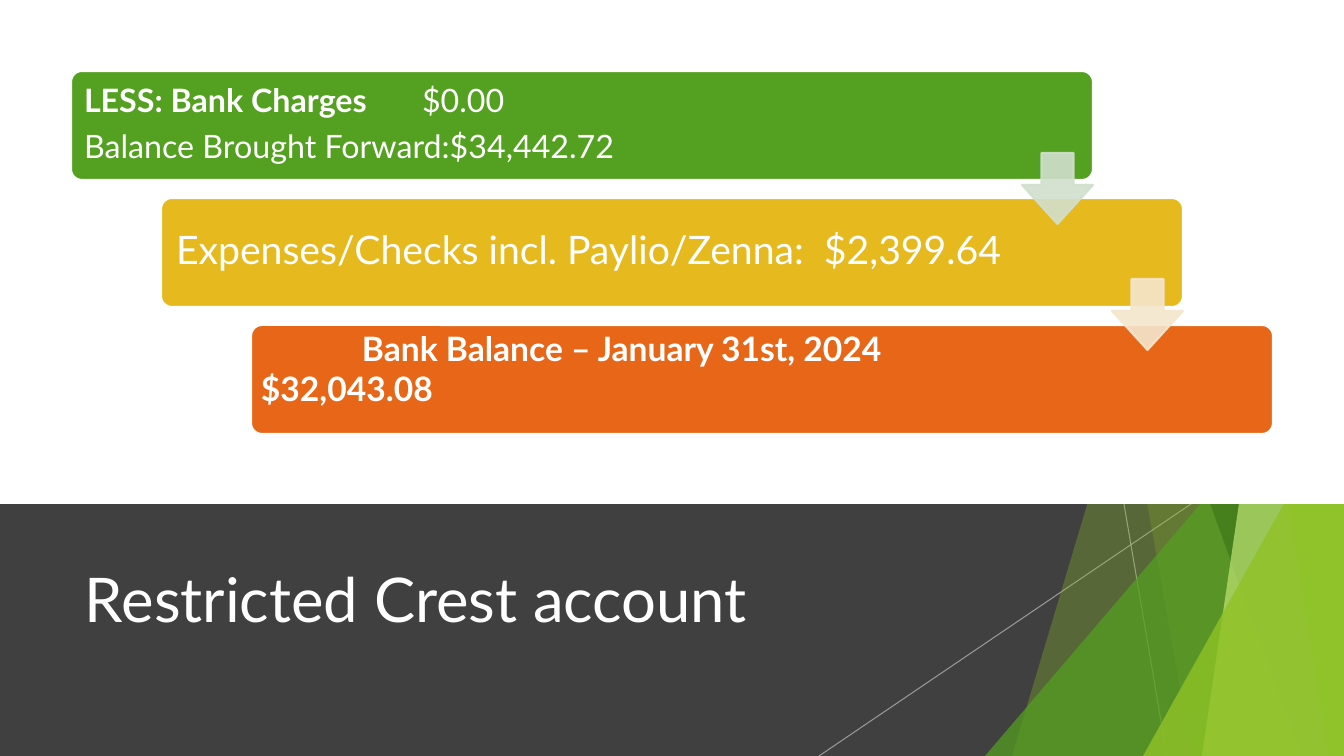
from lxml.etree import SubElement
from pptx import Presentation
from pptx.dml.color import RGBColor
from pptx.enum.shapes import MSO_CONNECTOR, MSO_SHAPE
from pptx.enum.text import MSO_ANCHOR
from pptx.oxml.ns import qn
from pptx.util import Pt

SCALE = 914400 / 100.8
WIDTH, HEIGHT, PANEL_TOP = 1344, 756, 504
FONT = "Lato"

WHITE = RGBColor(0xFF, 0xFF, 0xFF)
CHARCOAL = RGBColor(0x40, 0x40, 0x40)
SILVER = RGBColor(0xBF, 0xBF, 0xBF)
LIME = RGBColor(0x90, 0xC2, 0x26)
GREEN = RGBColor(0x54, 0xA0, 0x21)
FOREST = RGBColor(0x3F, 0x78, 0x19)
PALE_LIME = RGBColor(0xC0, 0xE4, 0x74)
GOLD = RGBColor(0xE6, 0xB9, 0x1E)
ORANGE = RGBColor(0xE7, 0x66, 0x18)
PALE_GREEN = RGBColor(0xD1, 0xDF, 0xCD)
PALE_GOLD = RGBColor(0xF5, 0xE6, 0xCD)

TITLE = "Restricted Crest account"

CARDS = [
    dict(color=GREEN, size=23, spacing=0.9, after=8, inset=10, tab=338,
         text_width=904, anchor=MSO_ANCHOR.MIDDLE,
         lines=[[("LESS: Bank Charges ", True), ("\t$0.00", False)],
                [("Balance Brought Forward:$34,442.72", False)]]),
    dict(color=GOLD, size=28, spacing=0.9, after=0, inset=12, tab=101,
         text_width=855, anchor=MSO_ANCHOR.MIDDLE,
         lines=[[("Expenses/Checks incl. Paylio/Zenna:  $2,399.64", False)]]),
    dict(color=ORANGE, size=24, spacing=1.0, after=0, inset=7, tab=101,
         text_width=855, anchor=MSO_ANCHOR.TOP,
         lines=[[("\tBank Balance – January 31st, 2024", True)],
                [("$32,043.08", True)]]),
]
ARROW_COLORS = [PALE_GREEN, PALE_GOLD]

RAYS = [(1124, 1167), (1191, 819)]
FACETS = [
    ("band", (1238, 1012), LIME, 30),
    ("band", (1058, 1192), LIME, 20),
    ("triangle", (985, 336), GREEN, 72),
    ("band", (1029, 1301), FOREST, 70),
    ("band", (1313, 1202), PALE_LIME, 70),
    ("band", (1206, 1329), LIME, 65),
    ("triangle", (1143, 396), LIME, 80),
]


def px(value):
    return round(value * SCALE)


def set_opacity(fill_or_line_color, percent):
    for color in fill_or_line_color.iter(qn("a:srgbClr")):
        SubElement(color, qn("a:alpha")).set("val", str(percent * 1000))


def paint(shape, color, opacity=100, outline=None):
    shape.shadow.inherit = False
    shape.fill.solid()
    shape.fill.fore_color.rgb = color
    if outline is None:
        shape.line.fill.background()
    else:
        shape.line.color.rgb = outline
        shape.line.width = Pt(1.5)
    if opacity < 100:
        set_opacity(shape._element.spPr, opacity)


def add_preset(slide, kind, box, adjustments=()):
    shape = slide.shapes.add_shape(kind, *map(px, box))
    for index, value in enumerate(adjustments):
        shape.adjustments[index] = value
    return shape


def add_ray(slide, top_x, bottom_x):
    ray = slide.shapes.add_connector(
        MSO_CONNECTOR.STRAIGHT, px(top_x), px(PANEL_TOP), px(bottom_x), px(HEIGHT))
    ray.line.color.rgb = SILVER
    ray.line.width = Pt(0.75)
    properties = ray._element.spPr
    set_opacity(properties, 70)
    SubElement(properties, qn("a:effectLst"))


def add_facet(slide, kind, corner, color, opacity):
    if kind == "triangle":
        left, top = corner
        box = (left, top, WIDTH - left, HEIGHT - top)
        shape = add_preset(slide, MSO_SHAPE.ISOSCELES_TRIANGLE, box, [1])
    else:
        top_x, bottom_x = corner
        builder = slide.shapes.build_freeform(top_x, 0, scale=SCALE)
        builder.add_line_segments(
            [(WIDTH, 0), (WIDTH, HEIGHT), (bottom_x, HEIGHT)], close=True)
        shape = builder.convert_to_shape()
    paint(shape, color, opacity)


def add_text(slide, box, lines, size, anchor, inset, spacing=1.0, after=0, tab=101):
    frame = slide.shapes.add_textbox(*map(px, box)).text_frame
    frame.word_wrap = True
    frame.vertical_anchor = anchor
    frame.margin_left = frame.margin_right = px(inset)
    frame.margin_top = frame.margin_bottom = 0 if anchor == MSO_ANCHOR.TOP else px(inset)
    for index, line in enumerate(lines):
        paragraph = frame.paragraphs[0] if index == 0 else frame.add_paragraph()
        paragraph.line_spacing = spacing
        paragraph.space_after = Pt(after)
        if any("\t" in text for text, bold in line):
            tabs = SubElement(paragraph._p.get_or_add_pPr(), qn("a:tabLst"))
            stop = SubElement(tabs, qn("a:tab"))
            stop.set("pos", str(px(tab)))
            stop.set("algn", "l")
        for text, bold in line:
            run = paragraph.add_run()
            run.text = text
            run.font.name = FONT
            run.font.size = Pt(size)
            run.font.bold = bold
            run.font.color.rgb = WHITE


def add_card(slide, index, card):
    left, top = 71 + 90 * index, 71 + 127 * index
    shape = add_preset(slide, MSO_SHAPE.ROUNDED_RECTANGLE, (left, top, 1022, 109), [0.1])
    paint(shape, card["color"], outline=WHITE)
    add_text(slide, (left + 3, top + 3, card["text_width"], 102), card["lines"],
             card["size"], card["anchor"], card["inset"],
             card["spacing"], card["after"], card["tab"])


def main():
    presentation = Presentation()
    presentation.slide_width, presentation.slide_height = px(WIDTH), px(HEIGHT)
    slide = presentation.slides.add_slide(presentation.slide_layouts[6])

    footer = add_preset(slide, MSO_SHAPE.RECTANGLE,
                        (0, PANEL_TOP, WIDTH, HEIGHT - PANEL_TOP))
    paint(footer, CHARCOAL)
    for ray in RAYS:
        add_ray(slide, *ray)
    for facet in FACETS:
        add_facet(slide, *facet)
    add_text(slide, (75, 525, 948, 145), [[(TITLE, False)]], 44, MSO_ANCHOR.MIDDLE, 10)

    panel = add_preset(slide, MSO_SHAPE.RECTANGLE, (0, 0, WIDTH, PANEL_TOP))
    paint(panel, WHITE)
    for index, card in enumerate(CARDS):
        add_card(slide, index, card)
    for index, color in enumerate(ARROW_COLORS):
        box = (1022 + 90 * index, 153 + 126 * index, 71, 71)
        arrow = add_preset(slide, MSO_SHAPE.DOWN_ARROW, box, [0.45, 0.55])
        paint(arrow, color, 90, outline=color)

    presentation.save("out.pptx")


if __name__ == "__main__":
    main()
